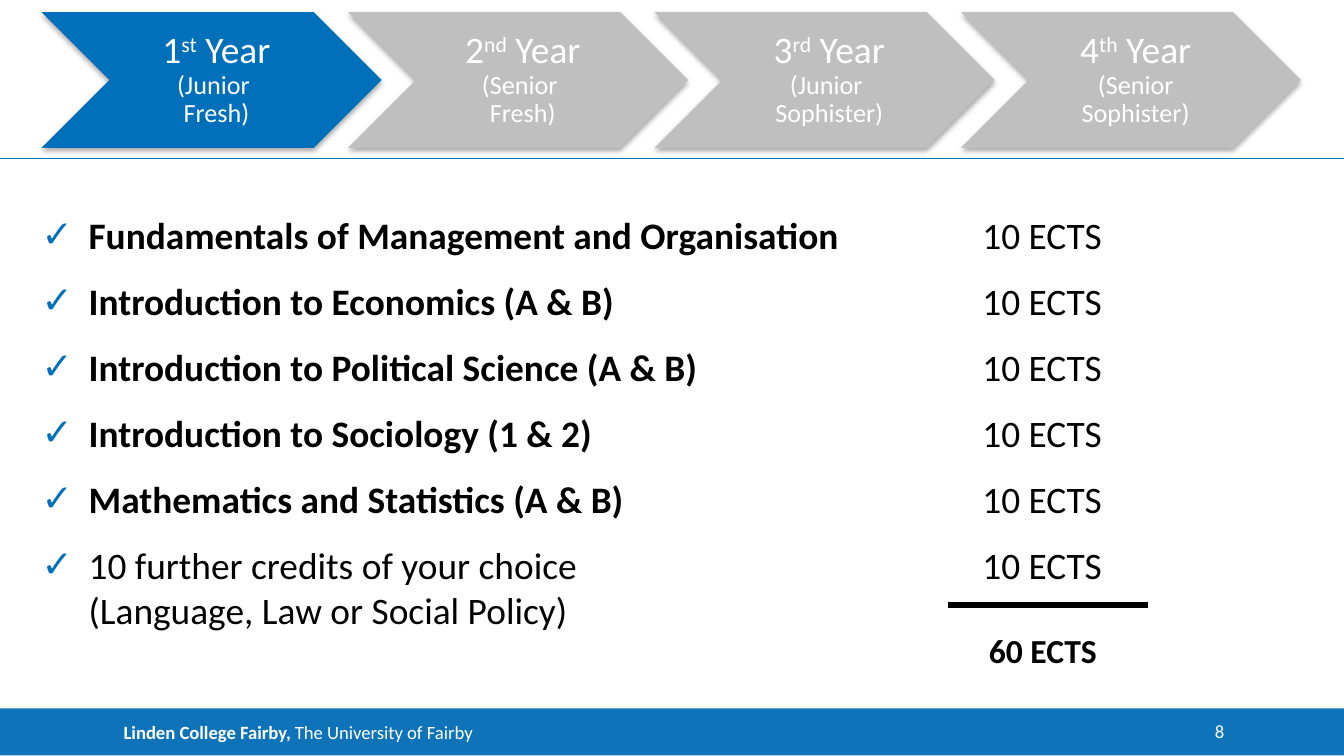
"""Build the first-year course slide with its year chevrons, modules and credits."""
from dataclasses import dataclass

import lxml.etree
import pptx
import pptx.dml.color
import pptx.enum.shapes
import pptx.enum.text
import pptx.oxml.ns
import pptx.util

Inches = pptx.util.Inches
Pt = pptx.util.Pt
ALIGN = pptx.enum.text.PP_ALIGN
ANCHOR = pptx.enum.text.MSO_ANCHOR
SHAPES = pptx.enum.shapes.MSO_SHAPE
qn = pptx.oxml.ns.qn

COLOURS = {
    "footer": "0E73B9",
    "accent": "0070BB",
    "inactive": "BFBFBF",
    "white": "FFFFFF",
    "black": "000000",
}
FONT = "Calibri"
NO_INSETS = (0, 0, 0, 0)


@dataclass
class Span:
    text: str
    size: float
    colour: str = "black"
    bold: bool = False
    baseline: int = 0


@dataclass
class Year:
    number: str
    suffix: str
    label: str
    colour: str = "inactive"


@dataclass
class Module:
    title: str
    tabs: int = 3
    bold: bool = True
    credits: str = "10 ECTS"
    detail: str = ""


YEARS = [
    Year("1", "st", "(Junior \nFresh)", "accent"),
    Year("2", "nd", "(Senior \nFresh)"),
    Year("3", "rd", "(Junior \nSophister)"),
    Year("4", "th", "(Senior Sophister)"),
]
MODULES = [
    Module("Fundamentals of Management and Organisation", tabs=2),
    Module("Introduction to Economics (A & B)"),
    Module("Introduction to Political Science (A & B)"),
    Module("Introduction to Sociology (1 & 2)"),
    Module("Mathematics and Statistics (A & B)"),
    Module("10 further credits of your choice ", bold=False,
           detail="\n(Language, Law or Social Policy)"),
]


def rgb(name: str) -> pptx.dml.color.RGBColor:
    return pptx.dml.color.RGBColor.from_string(COLOURS[name])


def add_spans(para, spans: list[Span]) -> None:
    for item in spans:
        for index, line in enumerate(item.text.split("\n")):
            if index:
                para.add_line_break()
            if not line:
                continue
            span = para.add_run()
            span.text = line
            span.font.name = FONT
            span.font.size = Pt(item.size)
            span.font.bold = item.bold
            span.font.color.rgb = rgb(item.colour)
            if item.baseline:
                span.font._element.set("baseline", str(item.baseline * 1000))


def set_insets(frame, insets: tuple) -> None:
    left, top, right, bottom = insets
    frame.margin_left, frame.margin_top = Inches(left), Inches(top)
    frame.margin_right, frame.margin_bottom = Inches(right), Inches(bottom)


def add_text_box(page, left: float, top: float, width: float, height: float,
                 insets: tuple = NO_INSETS, wrap: bool = True):
    box = page.shapes.add_textbox(Inches(left), Inches(top), Inches(width), Inches(height))
    box.text_frame.word_wrap = wrap
    set_insets(box.text_frame, insets)
    return box.text_frame


def add_filled_shape(page, kind, left: float, top: float, width: float, height: float,
                     colour: str):
    shape = page.shapes.add_shape(kind, Inches(left), Inches(top), Inches(width), Inches(height))
    shape.shadow.inherit = False
    shape.fill.solid()
    shape.fill.fore_color.rgb = rgb(colour)
    shape.line.fill.background()
    return shape


def add_rule(page, left: float, right: float, y: float, colour: str, weight: float) -> None:
    rule = page.shapes.add_connector(
        pptx.enum.shapes.MSO_CONNECTOR.STRAIGHT, Inches(left), Inches(y), Inches(right), Inches(y))
    rule.line.color.rgb = rgb(colour)
    rule.line.width = Pt(weight)
    lxml.etree.SubElement(rule._element.spPr, qn("a:effectLst"))


def add_soft_shadow(shape) -> None:
    effects = shape._element.spPr.find(qn("a:effectLst"))
    shadow = lxml.etree.SubElement(
        effects, qn("a:outerShdw"), blurRad=str(Pt(3.1)), dist=str(Pt(1.8)),
        dir="5400000", rotWithShape="0")
    colour = lxml.etree.SubElement(shadow, qn("a:srgbClr"), val=COLOURS["black"])
    lxml.etree.SubElement(colour, qn("a:alpha"), val="35000")


def add_year(page, year: Year, left: float) -> None:
    chevron = add_filled_shape(page, SHAPES.CHEVRON, left, 0.09, 2.53, 1.01, year.colour)
    add_soft_shadow(chevron)
    frame = add_text_box(page, left + 0.51, 0.09, 1.52, 1.01, (0.09, 0.03, 0.03, 0.03))
    frame.vertical_anchor = ANCHOR.MIDDLE
    para = frame.paragraphs[0]
    para.alignment = ALIGN.CENTER
    para.line_spacing = 0.9
    add_spans(para, [
        Span(year.number, 20, "white"),
        Span(year.suffix, 20, "white", baseline=30),
        Span(" Year\n", 20, "white"),
        Span(year.label, 14, "white"),
    ])


def add_tick_and_tabs(para) -> None:
    properties = para._p.get_or_add_pPr()
    properties.set("marL", str(Inches(0.35)))
    properties.set("indent", str(-Inches(0.35)))
    colour = lxml.etree.SubElement(properties, qn("a:buClr"))
    lxml.etree.SubElement(colour, qn("a:srgbClr"), val=COLOURS["accent"])
    lxml.etree.SubElement(properties, qn("a:buFont"), typeface=FONT)
    lxml.etree.SubElement(properties, qn("a:buChar"), char="✓")
    stops = lxml.etree.SubElement(properties, qn("a:tabLst"))
    for inch in range(1, 8):
        lxml.etree.SubElement(stops, qn("a:tab"), pos=str(Inches(inch)), algn="l")


def add_modules(page, modules: list[Module]) -> None:
    frame = add_text_box(page, 0.31, 1.58, 8.23, 3.31)
    for index, module in enumerate(modules):
        para = frame.add_paragraph() if index else frame.paragraphs[0]
        para.space_before = Pt(11.3)
        add_tick_and_tabs(para)
        add_spans(para, [
            Span(module.title + "\t" * module.tabs, 20, bold=module.bold),
            Span(module.credits + module.detail, 20),
        ])


def add_footer(page) -> None:
    band = add_filled_shape(page, SHAPES.RECTANGLE, 0, 5.27, 10, 0.35, "footer")
    frame = band.text_frame
    set_insets(frame, (0.12, 0, 0, 0))
    frame.vertical_anchor = ANCHOR.MIDDLE
    para = frame.paragraphs[0]
    para.alignment = ALIGN.LEFT
    para._p.get_or_add_pPr().set("marL", str(Inches(0.8)))
    add_spans(para, [
        Span("Linden College Fairby, ", 10, "white", True),
        Span("The University of Fairby", 10, "white"),
    ])
    number = add_text_box(page, 8.7, 5.36, 0.41, 0.17).paragraphs[0]
    number.alignment = ALIGN.RIGHT
    add_spans(number, [Span("8", 10, "white")])


def main() -> None:
    deck = pptx.Presentation()
    deck.slide_width = Inches(10)
    deck.slide_height = deck.slide_width * 9 // 16
    page = deck.slides.add_slide(deck.slide_layouts[6])
    add_footer(page)
    add_rule(page, 0, 10, 1.18, "accent", 0.75)
    add_modules(page, MODULES)
    for index, year in enumerate(YEARS):
        add_year(page, year, 0.31 + 2.28 * index)
    add_rule(page, 7.05, 8.54, 4.5, "black", 3.5)
    total = add_text_box(page, 7.26, 4.64, 1.07, 0.4, (0.1, 0.05, 0.1, 0.05), False)
    add_spans(total.paragraphs[0], [Span("60 ECTS", 18, bold=True)])
    deck.save("out.pptx")


if __name__ == "__main__":
    main()
